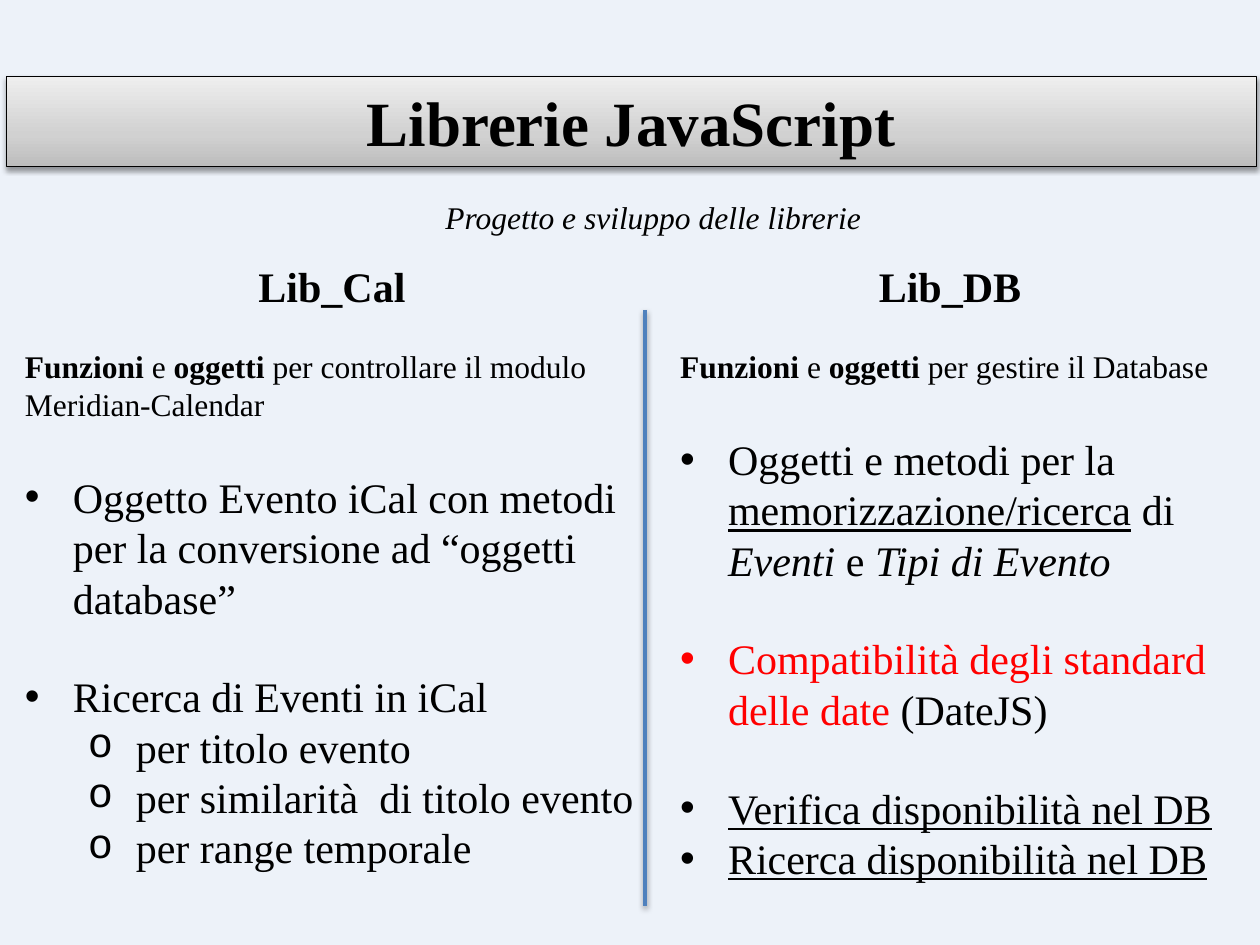
from copy import deepcopy
from lxml import etree
from pptx import Presentation
from pptx.dml.color import RGBColor
from pptx.enum.shapes import MSO_CONNECTOR, MSO_SHAPE
from pptx.enum.text import MSO_ANCHOR, PP_ALIGN
from pptx.oxml import parse_xml
from pptx.oxml.ns import nsdecls, qn
from pptx.util import Inches, Pt

BOLD = {"bold": True}
ITALIC = {"italic": True}
UNDER = {"underline": True}
RED = {"color": "FF0000"}
HEAD = {"size": 24, "bold": True}
SMALL = {"size": 18}
GAP = 27.6

LEFT = [
    ([("Oggetto Evento iCal con metodi per la conversione ad “oggetti database”", {})], 0, GAP),
    ([("Ricerca di Eventi in iCal", {})], 0, GAP),
    ([("per titolo evento", {})], 1, 0),
    ([("per similarità  di titolo evento", {})], 1, 0),
    ([("per range temporale", {})], 1, 0),
]
RIGHT = [
    ([("Oggetti e metodi per la ", {}), ("memorizzazione/ricerca", UNDER), (" di ", {}),
      ("Eventi", ITALIC), (" e ", {}), ("Tipi di Evento", ITALIC)], 0, GAP),
    ([("Compatibilità degli standard delle date", RED), (" (DateJS)", {})], 0, GAP),
    ([("Verifica disponibilità nel DB", UNDER)], 0, GAP),
    ([("Ricerca disponibilità nel DB", UNDER)], 0, 0),
]


def paint(color, value):
    color.rgb = RGBColor.from_string(value)


def write(para, runs, align=PP_ALIGN.LEFT, before=0):
    para.alignment = align
    para.space_before = Pt(before)
    for text, style in runs:
        run = para.add_run()
        run.text = text
        values = {"name": "Times New Roman", "size": 24, "color": "000000"} | style
        values["size"] = Pt(values["size"])
        paint(run.font.color, values.pop("color"))
        for key, value in values.items():
            setattr(run.font, key, value)


def add_bullet(para, level):
    para.level = level
    props = para._p.get_or_add_pPr()
    props.set("marL", str(Inches(0.38 + 0.5 * level)))
    props.set("indent", str(-Inches(0.38)))
    font, char = (("Arial", "•"), ("Courier New", "o"))[level]
    etree.SubElement(props, qn("a:buFont")).set("typeface", font)
    etree.SubElement(props, qn("a:buChar")).set("char", char)


def add_shadow(shape):
    shape._element.spPr.append(parse_xml(
        f'<a:effectLst {nsdecls("a")}>'
        '<a:outerShdw blurRad="40000" dist="20000" dir="5400000" rotWithShape="0">'
        '<a:srgbClr val="000000"><a:alpha val="38000"/></a:srgbClr>'
        '</a:outerShdw></a:effectLst>'))


def add_text(slide, box):
    frame = slide.shapes.add_textbox(*map(Inches, box)).text_frame
    frame.word_wrap = True
    return frame


def add_title(slide, text):
    bar = slide.shapes.add_shape(
        MSO_SHAPE.RECTANGLE, *map(Inches, (0.05, 0.61, 9.92, 0.71)))
    bar.fill.gradient()
    bar.fill.gradient_angle = 90
    stops = bar._element.spPr.find(".//" + qn("a:gsLst"))
    stops.append(deepcopy(stops[-1]))
    shades = ((0, "BDBDBD"), (0.35, "D1D1D1"), (1, "EEEEEE"))
    for stop, (place, shade) in zip(bar.fill.gradient_stops, shades):
        stop.position = place
        paint(stop.color, shade)
    paint(bar.line.color, "000000")
    bar.line.width = Pt(0.75)
    add_shadow(bar)
    frame = bar.text_frame
    frame.vertical_anchor = MSO_ANCHOR.MIDDLE
    write(frame.paragraphs[0], [(text, {"size": 36, "bold": True})], PP_ALIGN.CENTER)


def add_column(slide, box, head, scope, items):
    frame = add_text(slide, box)
    write(frame.paragraphs[0], [(head, HEAD)], PP_ALIGN.CENTER)
    intro = [("Funzioni", SMALL | BOLD), (" e ", SMALL),
             ("oggetti", SMALL | BOLD), (scope, SMALL)]
    write(frame.add_paragraph(), intro, before=20.7)
    for runs, level, gap in items:
        para = frame.add_paragraph()
        write(para, runs, before=gap)
        add_bullet(para, level)


def add_rule(slide):
    rule = slide.shapes.add_connector(
        MSO_CONNECTOR.STRAIGHT, *map(Inches, (5.12, 2.46, 5.12, 7.19)))
    paint(rule.line.color, "4F81BD")
    rule.line.width = Pt(2)
    add_shadow(rule)


def main():
    deck = Presentation()
    deck.slide_width, deck.slide_height = Inches(10), Inches(7.5)
    slide = deck.slides.add_slide(deck.slide_layouts[6])
    slide.background.fill.solid()
    paint(slide.background.fill.fore_color, "EDF2F9")
    add_title(slide, "Librerie JavaScript")
    add_column(slide, (0.1, 2.02, 5.07, 5.05), "Lib_Cal",
               " per controllare il modulo Meridian-Calendar", LEFT)
    add_rule(slide)
    add_column(slide, (5.3, 2.02, 4.48, 5.25), "Lib_DB",
               " per gestire il Database", RIGHT)
    note = add_text(slide, (3.38, 1.52, 3.61, 0.4))
    write(note.paragraphs[0],
          [("Progetto e sviluppo delle librerie", SMALL | ITALIC)], PP_ALIGN.CENTER)
    deck.save("out.pptx")


if __name__ == "__main__":
    main()
